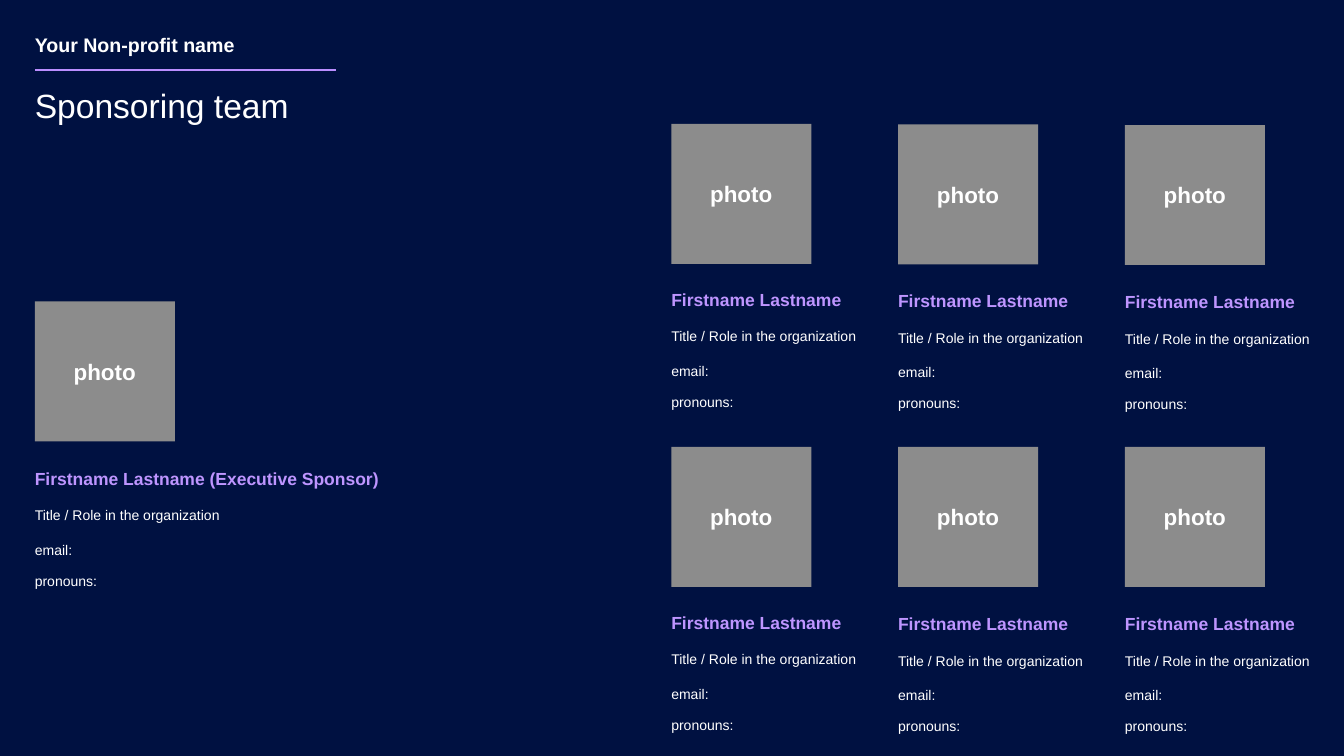
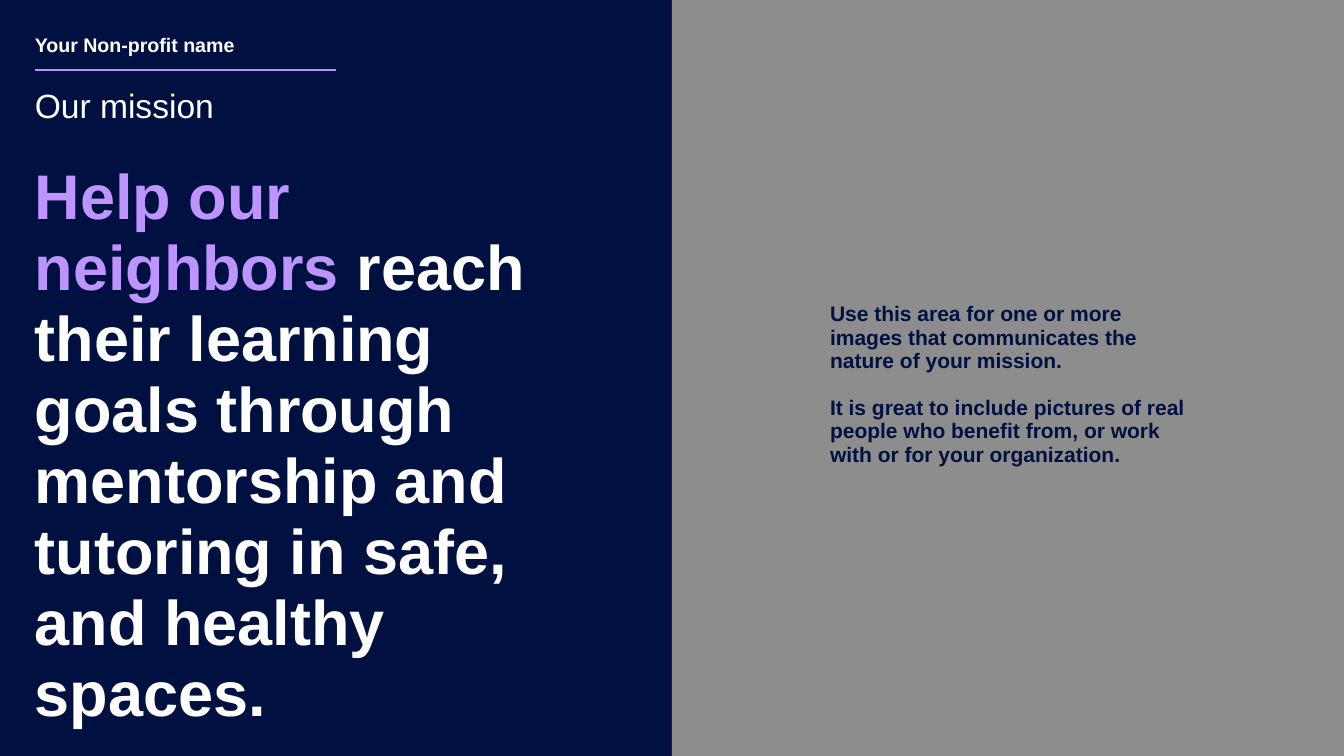
from dataclasses import dataclass

from lxml import etree
from pptx import Presentation
from pptx.dml.color import RGBColor
from pptx.enum.shapes import MSO_CONNECTOR, MSO_SHAPE
from pptx.enum.text import MSO_ANCHOR as Anchor, MSO_AUTO_SIZE as AutoSize, PP_ALIGN as Align
from pptx.oxml.ns import qn
from pptx.util import Pt

COLORS = {
    "navy": "001141",
    "white": "FFFFFF",
    "rule": "BB8EFF",
    "lilac": "BE95FF",
    "photo": "8C8C8C",
    "image_area": "8D8D8D",
}
FONT = "Arial"
SLIDE_W, SLIDE_H = 1920, 1080
MARGIN = 49.7
HEADER_W = 430.5
LINE_SPACING = 0.94
PHOTO_SIZE = 200
COLUMN_LEFT, COLUMN_STEP = 959, 324
TITLE_AND_CONTENT = 1


@dataclass(frozen=True)
class Style:
    size: float
    color: str = "white"
    bold: bool = False
    space_before: float = 0


@dataclass(frozen=True)
class Area:
    left: float
    top: float
    width: float
    height: float

    def lengths(self) -> tuple:
        return Pt(self.left), Pt(self.top), Pt(self.width), Pt(self.height)


@dataclass(frozen=True)
class Member:
    left: float
    photo_top: float
    text_top: float
    name: str = "Firstname Lastname"
    text_width: float = 274.5
    text_height: float = 195


TITLE = Style(48)
ORGANIZATION = Style(28, bold=True)
PHOTO_LABEL = Style(32, bold=True)
NAME = Style(25, "lilac", bold=True)
MISSION = Style(90, bold=True)
MISSION_ACCENT = Style(90, "lilac", bold=True)
HINT = Style(30, "navy", bold=True)
HINT_NEXT = Style(30, "navy", bold=True, space_before=32.4)
MEMBER_DETAILS = [
    ("Title / Role in the organization", Style(20, space_before=27)),
    ("email:", Style(20, space_before=27)),
    ("pronouns:", Style(20, space_before=21.6)),
]

SPONSOR = Member(MARGIN, 430.5, 671, "Firstname Lastname (Executive Sponsor)", 625, 170)
# Each row lists (photo top, text top) by column.
TEAM_ROWS = [
    [(177, 414.7), (177.8, 416.9), (178.6, 418.3)],
    [(638.6, 876.2), (638.6, 878.4), (638.6, 878.4)],
]


def rgb(name: str) -> RGBColor:
    return RGBColor.from_string(COLORS[name])


def format_span(span, style: Style) -> None:
    span.font.name = FONT
    span.font.size = Pt(style.size)
    span.font.bold = style.bold
    span.font.color.rgb = rgb(style.color)


def prepare_frame(box, inset: float = 0, anchor=Anchor.TOP):
    frame = box.text_frame
    frame.word_wrap = True
    frame.auto_size = AutoSize.NONE
    frame.vertical_anchor = anchor
    frame.margin_left = frame.margin_right = Pt(inset)
    frame.margin_top = frame.margin_bottom = Pt(inset)
    return frame


def format_para(para, style: Style, spacing: float, align=Align.LEFT) -> None:
    para.alignment = align
    para.line_spacing = spacing
    para.space_before = Pt(style.space_before)
    para.space_after = Pt(0)
    for span in para.runs:
        format_span(span, style)


def write(box, lines: list, spacing: float = 1.0) -> None:
    """Fill a box with (text, style) paragraphs."""
    frame = prepare_frame(box)
    frame.text = "\n".join(text for text, _ in lines)
    for para, (_, style) in zip(frame.paragraphs, lines):
        format_para(para, style, spacing)


def place(box, area: Area) -> None:
    box.left, box.top, box.width, box.height = area.lengths()


def remove_bullets(box) -> None:
    for para in box.text_frame.paragraphs:
        properties = para._p.get_or_add_pPr()
        properties.set("marL", "0")
        properties.set("indent", "0")
        etree.SubElement(properties, qn("a:buNone"))


def add_text(page, area: Area, lines: list, spacing: float = 1.0) -> None:
    write(page.shapes.add_textbox(*area.lengths()), lines, spacing)


def add_block(page, area: Area, color: str):
    block = page.shapes.add_shape(MSO_SHAPE.RECTANGLE, *area.lengths())
    block.shadow.inherit = False
    block.fill.solid()
    block.fill.fore_color.rgb = rgb(color)
    block.line.fill.background()
    return block


def add_page(deck, title: str):
    """Add a slide with the shared organization name, rule and title."""
    page = deck.slides.add_slide(deck.slide_layouts[TITLE_AND_CONTENT])
    place(page.shapes.title, Area(MARGIN, 121, HEADER_W, 53.3))
    write(page.shapes.title, [(title, TITLE)])
    add_text(page, Area(MARGIN, 47.5, HEADER_W, 31), [("Your Non-profit name", ORGANIZATION)])
    rule = page.shapes.add_connector(
        MSO_CONNECTOR.STRAIGHT, Pt(MARGIN), Pt(100), Pt(MARGIN + HEADER_W), Pt(100)
    )
    rule.line.color.rgb = rgb("rule")
    rule.line.width = Pt(2)
    etree.SubElement(rule._element.spPr, qn("a:effectLst"))
    return page


def add_photo(page, member: Member) -> None:
    photo = add_block(
        page, Area(member.left, member.photo_top, PHOTO_SIZE, PHOTO_SIZE), "photo"
    )
    frame = prepare_frame(photo, 4, Anchor.MIDDLE)
    frame.text = "photo"
    format_para(frame.paragraphs[0], PHOTO_LABEL, 1.0, Align.CENTER)


def add_member(page, member: Member, body=None) -> None:
    """Draw a photo with its details, in the body placeholder if one is given."""
    add_photo(page, member)
    area = Area(member.left, member.text_top, member.text_width, member.text_height)
    lines = [(member.name, NAME), *MEMBER_DETAILS]
    if body is None:
        add_text(page, area, lines, LINE_SPACING)
    else:
        place(body, area)
        write(body, lines, LINE_SPACING)
        remove_bullets(body)


def add_team_page(deck) -> None:
    page = add_page(deck, "Sponsoring team")
    add_member(page, SPONSOR, page.placeholders[1])
    for row in TEAM_ROWS:
        for column, (photo_top, text_top) in enumerate(row):
            left = COLUMN_LEFT + column * COLUMN_STEP
            add_member(page, Member(left, photo_top, text_top))


def add_mission_page(deck) -> None:
    page = add_page(deck, "Our mission")
    body = page.placeholders[1]
    place(body, Area(MARGIN, 232.5, 824.5, 751))
    write(body, [("Help our neighbors", MISSION_ACCENT)], LINE_SPACING)
    span = body.text_frame.paragraphs[0].add_run()
    span.text = (
        " reach their learning goals through mentorship and tutoring"
        " in safe, and healthy spaces."
    )
    format_span(span, MISSION)
    remove_bullets(body)

    add_block(page, Area(SLIDE_W / 2, -2, SLIDE_W / 2 + 1, SLIDE_H + 4), "image_area")
    hints = [
        (
            "Use this area for one or more images that communicates"
            " the nature of your mission.",
            HINT,
        ),
        (
            "It is great to include pictures of real people who benefit from,"
            " or work with or for your organization.",
            HINT_NEXT,
        ),
    ]
    add_text(page, Area(1185.8, 432, 527, 217.5), hints, LINE_SPACING)


def main() -> None:
    deck = Presentation()
    deck.slide_width, deck.slide_height = Pt(SLIDE_W), Pt(SLIDE_H)
    background = deck.slide_master.background.fill
    background.solid()
    background.fore_color.rgb = rgb("navy")
    add_team_page(deck)
    add_mission_page(deck)
    deck.save("out.pptx")


if __name__ == "__main__":
    main()
